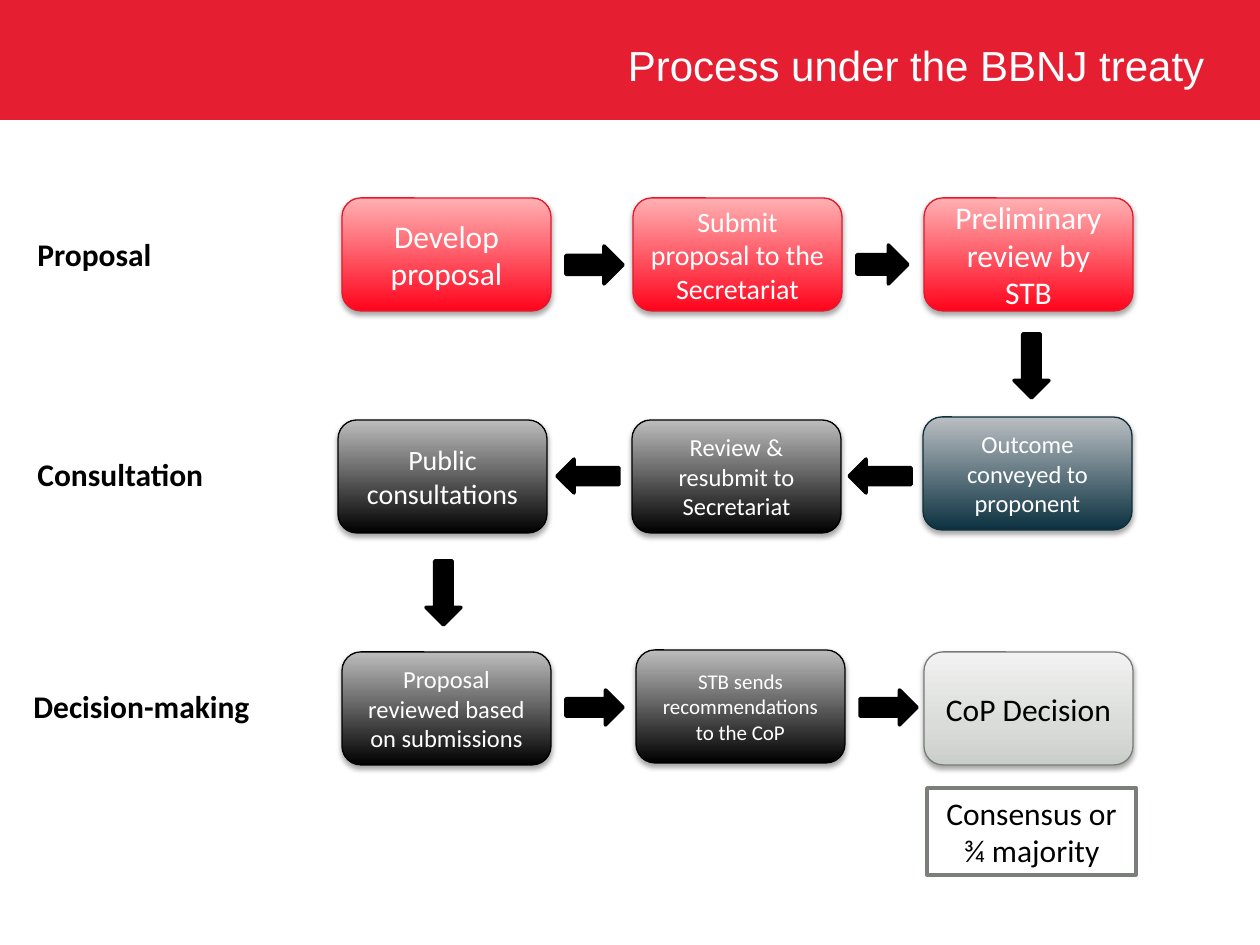
from copy import deepcopy

from lxml.etree import SubElement
from pptx import Presentation
from pptx.dml.color import RGBColor
from pptx.enum.shapes import MSO_SHAPE as SHAPE
from pptx.enum.text import MSO_ANCHOR as ANCHOR, MSO_AUTO_SIZE as AUTO, PP_ALIGN as ALIGN
from pptx.oxml.ns import qn
from pptx.util import Emu, Pt

COLORS = {
    "band": "E51E31", "white": "FFFFFF", "black": "000000", "frame": "7B7F7A",
    "red_line": "E5182C", "teal_line": "102D3A", "grey_line": "787C77",
}
GRADIENTS = {
    "red": [(0, "FF041C"), (1, "FFB1B3")],
    "teal": [(0, "0B3140"), (1, "BABFC3")],
    "black": [(0, "000000"), (1, "BDBDBD")],
    "grey": [(0, "CACECA"), (0.35, "DADCD9"), (1, "F1F2F1")],
}
BOX_W, BOX_H = 209, 113


def px(n):
    return Emu(round(n * 914400 / 126))


def rgb(name):
    return RGBColor.from_string(COLORS[name])


class Deck:
    def __init__(self):
        self.prs = Presentation()
        self.prs.slide_width, self.prs.slide_height = px(1260), px(945)
        self.s = self.prs.slides.add_slide(self.prs.slide_layouts[5])

    def put_text(self, sp, text, size, color, align=ALIGN.CENTER, anchor=ANCHOR.MIDDLE,
                 font="Calibri", bold=False):
        tf = sp.text_frame
        for key, value in {"word_wrap": True, "auto_size": AUTO.NONE,
                           "vertical_anchor": anchor}.items():
            setattr(tf, key, value)
        p = tf.paragraphs[0]
        p.alignment = align
        r = p.add_run()
        r.text = text
        for key, value in {"name": font, "size": Pt(size), "bold": bold}.items():
            setattr(r.font, key, value)
        r.font.color.rgb = rgb(color)

    def shape(self, kind, x, y, w, h, fill=None, line=None, width=0.75):
        sp = self.s.shapes.add_shape(kind, px(x), px(y), px(w), px(h))
        sp.shadow.inherit = False
        if fill:
            sp.fill.solid()
            sp.fill.fore_color.rgb = rgb(fill)
        if line:
            sp.line.color.rgb = rgb(line)
            sp.line.width = Pt(width)
        else:
            sp.line.fill.background()
        return sp

    def band(self, h):
        sp = self.shape(SHAPE.RECTANGLE, 0, 0, 1260, h, "band")
        self.s.shapes._spTree.insert(2, sp._element)

    def title(self, text, x, y, w, h):
        sp = self.s.shapes.title
        for key, value in {"left": x, "top": y, "width": w, "height": h}.items():
            setattr(sp, key, px(value))
        self.put_text(sp, text, 24, "white", ALIGN.RIGHT, font="Arial")

    def step(self, text, x, y, size, look, color="white"):
        line = look if look in COLORS else look + "_line"
        sp = self.shape(SHAPE.ROUNDED_RECTANGLE, x, y, BOX_W, BOX_H, line=line)
        self.gradient(sp, GRADIENTS[look])
        self.shadow(sp)
        self.put_text(sp, text, size, color)

    def gradient(self, sp, stops):
        sp.fill.gradient()
        sp.fill.gradient_angle = 90
        first = sp._element.spPr.find(".//" + qn("a:gs"))
        for _ in stops[2:]:
            first.addnext(deepcopy(first))
        for stop, (position, color) in zip(sp.fill.gradient_stops, stops):
            stop.position = position
            stop.color.rgb = RGBColor.from_string(color)

    def shadow(self, sp):
        effects = sp._element.spPr.find(qn("a:effectLst"))
        outer = SubElement(effects, qn("a:outerShdw"), blurRad="40000", dist="23000",
                           dir="5400000", rotWithShape="0")
        color = SubElement(outer, qn("a:srgbClr"), val=COLORS["black"])
        SubElement(color, qn("a:alpha"), val="35000")

    def arrow(self, kind, x, y, w, h, rotation=0):
        sp = self.shape(kind, x, y, w, h, "black", "black", 2)
        sp.rotation = rotation

    def note(self, text, x, y, w, h):
        sp = self.shape(SHAPE.RECTANGLE, x, y, w, h, "white", "frame", 2)
        self.put_text(sp, text, 18, "black")

    def label(self, text, x, y, w):
        sp = self.s.shapes.add_textbox(px(x), px(y), px(w), px(50))
        self.put_text(sp, text, 18, "black", ALIGN.LEFT, ANCHOR.TOP, bold=True)


def main():
    deck = Deck()
    deck.band(120)
    deck.title("Process under the BBNJ treaty", 253, 40, 964, 50)

    for step in [
        ("Develop proposal", 342, 198, 18, "red"),
        ("Submit proposal to the Secretariat", 633, 198, 16, "red"),
        ("Preliminary review by STB", 924, 198, 18, "red"),
        ("Outcome conveyed to proponent", 923, 417, 14, "teal"),
        ("Review & resubmit to Secretariat", 632, 420, 14, "black"),
        ("Public consultations", 338, 420, 16, "black"),
        ("Proposal reviewed based on submissions", 342, 652, 14, "black"),
        ("STB sends recommendations to the CoP", 636, 650, 12, "black"),
        ("CoP Decision", 924, 652, 18, "grey", "black"),
    ]:
        deck.step(*step)

    for x, y, w, h in [(566, 246, 57, 38), (857, 245, 51, 39),
                       (566, 690, 57, 35), (860, 690, 57, 35)]:
        deck.arrow(SHAPE.RIGHT_ARROW, x, y, w, h)
    for x in (849, 557):
        deck.arrow(SHAPE.RIGHT_ARROW, x, 459, 62, 34, 180)
    for x, y in [(1014, 334), (426, 561)]:
        deck.arrow(SHAPE.DOWN_ARROW, x, y, 35, 64)

    deck.note("Consensus or ¾ majority", 927, 788, BOX_W, 87)
    for label in [("Proposal", 25, 229, 176), ("Consultation", 25, 449, 223),
                  ("Decision-making", 21, 681, 268)]:
        deck.label(*label)

    deck.prs.save("out.pptx")


if __name__ == "__main__":
    main()
